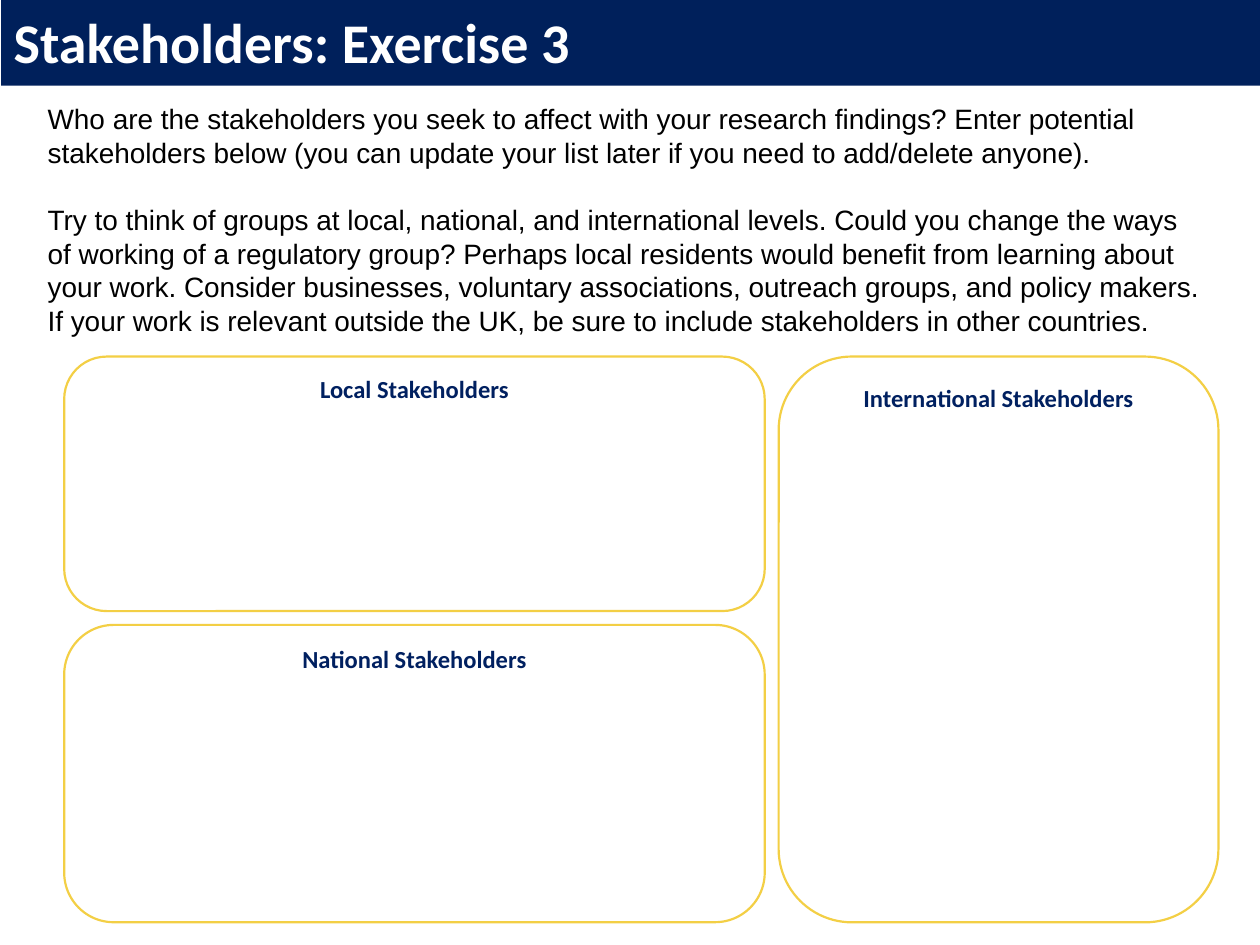
from dataclasses import dataclass

from pptx import Presentation
from pptx.dml.color import RGBColor as RGB
from pptx.enum.shapes import MSO_SHAPE as Shape
from pptx.enum.text import MSO_ANCHOR as Anchor, PP_ALIGN as Align
from pptx.util import Inches, Pt


@dataclass(frozen=True)
class Theme:
    banner: RGB = RGB(0x00, 0x20, 0x5B)
    heading: RGB = RGB(0x00, 0x20, 0x60)
    outline: RGB = RGB(0xF3, 0xCF, 0x45)
    white: RGB = RGB(0xFF, 0xFF, 0xFF)
    black: RGB = RGB(0x00, 0x00, 0x00)
    heading_font: str = "Calibri"
    body_font: str = "Arial"
    title_size: float = 32
    body_size: float = 16
    label_size: float = 14
    outline_width: float = 1.25


THEME = Theme()

# Panel grid, in inches
GRID_LEFT, GRID_TOP, GAP = 0.51, 2.83, 0.11
COLUMNS = (5.56, 3.49)
ROWS = (2.02, 2.36)
PANEL_INSET = 0.04

# label, column, first row, rows spanned
PANELS = (
    ("Local Stakeholders", 0, 0, 1),
    ("National Stakeholders", 0, 1, 1),
    ("International Stakeholders", 1, 0, 2),
)

INSTRUCTIONS = (
    "Who are the stakeholders you seek to affect with your research findings? "
    "Enter potential stakeholders below (you can update your list later if you "
    "need to add/delete anyone).",
    "Try to think of groups at local, national, and international levels. Could "
    "you change the ways of working of a regulatory group? Perhaps local "
    "residents would benefit from learning about your work. Consider businesses, "
    "voluntary associations, outreach groups, and policy makers. If your work is "
    "relevant outside the UK, be sure to include stakeholders in other countries.",
)


def style(paragraph, font, size, color, bold=False, align=Align.LEFT):
    paragraph.alignment = align
    paragraph.font.name = font
    paragraph.font.size = Pt(size)
    paragraph.font.color.rgb = color
    paragraph.font.bold = bold


def span(start, sizes, first, count=1):
    """Offset and length of neighbouring grid tracks, gaps included."""
    offset = start + sum(sizes[:first]) + GAP * first
    length = sum(sizes[first:first + count]) + GAP * (count - 1)
    return Inches(offset), Inches(length)


def add_banner(slide, title):
    banner = slide.shapes.add_shape(
        Shape.RECTANGLE, Inches(0.01), Inches(-0.03), Inches(9.99), Inches(0.71))
    banner.shadow.inherit = False
    banner.fill.solid()
    banner.fill.fore_color.rgb = THEME.banner
    banner.line.fill.background()
    frame = banner.text_frame
    frame.vertical_anchor = Anchor.MIDDLE
    frame.text = title
    style(frame.paragraphs[0], THEME.heading_font, THEME.title_size,
          THEME.white, bold=True)


def add_instructions(slide, texts):
    box = slide.shapes.add_textbox(
        Inches(0.28), Inches(0.76), Inches(9.4), Inches(1.99))
    frame = box.text_frame
    frame.word_wrap = True
    frame.text = "\n".join(texts)
    for paragraph in frame.paragraphs:
        style(paragraph, THEME.body_font, THEME.body_size, THEME.black)
    for paragraph in frame.paragraphs[1:]:
        paragraph.space_before = Pt(THEME.body_size * 1.2)


def add_panel(slide, label, column, row, row_count):
    left, width = span(GRID_LEFT, COLUMNS, column)
    top, height = span(GRID_TOP, ROWS, row, row_count)
    panel = slide.shapes.add_shape(
        Shape.ROUNDED_RECTANGLE, left, top, width, height)
    panel.shadow.inherit = False
    panel.fill.background()
    panel.line.color.rgb = THEME.outline
    panel.line.width = Pt(THEME.outline_width)
    frame = panel.text_frame
    frame.margin_left = frame.margin_right = Inches(PANEL_INSET)
    frame.margin_top = frame.margin_bottom = Inches(PANEL_INSET)
    frame.vertical_anchor = Anchor.TOP
    frame.text = label
    style(frame.paragraphs[0], THEME.heading_font, THEME.label_size,
          THEME.heading, bold=True, align=Align.CENTER)


def main():
    deck = Presentation()
    deck.slide_width, deck.slide_height = Inches(10), Inches(7.5)
    slide = deck.slides.add_slide(deck.slide_layouts[6])

    # Title and exercise text
    add_banner(slide, "Stakeholders: Exercise 3")
    add_instructions(slide, INSTRUCTIONS)

    # Panels to fill in
    for panel in PANELS:
        add_panel(slide, *panel)

    deck.save("out.pptx")


if __name__ == "__main__":
    main()
